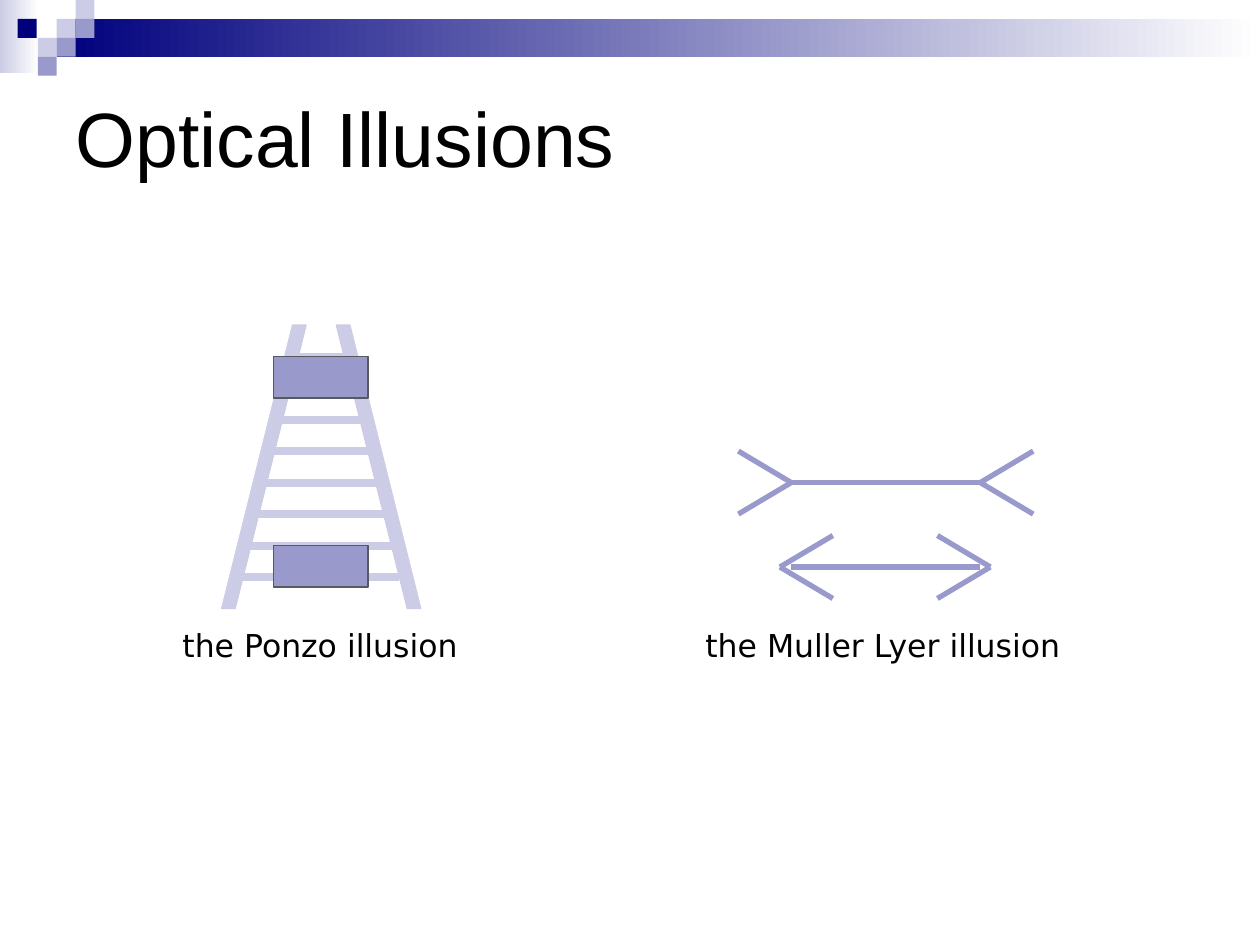
from pptx import Presentation
from pptx.dml.color import RGBColor
from pptx.enum.shapes import MSO_CONNECTOR as Link, MSO_SHAPE as Form
from pptx.enum.text import MSO_ANCHOR as Anchor, PP_ALIGN as Align
from pptx.util import Pt
from lxml.etree import SubElement
from pptx.oxml.ns import qn

PX = 9144  # 100 px to the inch
HUES = {"navy": "00007D", "pale": "CCCCE6", "mid": "9999CC",
        "edge": "555A5E", "white": "FFFFFF", "black": "000000"}

TITLE = "Optical Illusions"
CAPTIONS = [("the Ponzo illusion", 135, 240), ("the Muller Lyer illusion", 550, 305)]
BANDS = [("pale", (0, 0, 31, 58)), ("navy", (45, 15, 955, 30))]
CELL = 15
TILES = [("pale", 45, 15), ("pale", 60, 0), ("mid", 60, 15), ("pale", 30, 30),
         ("navy", 14, 15), ("mid", 45, 30), ("mid", 30, 45)]

LEGS = [(176, False), (267, True)]
# Left and right end of each rung, from the lowest up; None is a gap
RUNGS = [(184, 317), (192, 317), (201, 309), (209, 301),
         (217, 292), (217, 292), None, (234, 276)]
RUNG_LOW, RUNG_STEP = 458, 25
BAR_TOPS = [433, 283]

SHAFT = (628, 778)
FIN = (42, 25)
# Shaft height, fin tips, and the way the left fins point
ARROWS = [(383, (628, 778), -1), (450, (619, 786), 1)]

deck = Presentation()
deck.slide_width, deck.slide_height = 1000 * PX, 750 * PX
slide = deck.slides.add_slide(deck.slide_layouts[5])
shapes = slide.shapes


def hue(name):
    return RGBColor.from_string(HUES[name])


def scale(box):
    return [n * PX for n in box]


def block(box, fill, edge=None, form=Form.RECTANGLE, fade=False):
    shape = shapes.add_shape(form, *scale(box))
    shape.shadow.inherit = False
    if fade:
        shape.fill.gradient()
        shape.fill.gradient_angle = 0
        for stop, name in zip(shape.fill.gradient_stops, (fill, "white")):
            stop.color.rgb = hue(name)
    else:
        shape.fill.solid()
        shape.fill.fore_color.rgb = hue(fill)
    if edge:
        shape.line.color.rgb = hue(edge)
        shape.line.width = Pt(0.75)
    else:
        shape.line.fill.background()
    return shape


def stroke(start, end, name, width):
    line = shapes.add_connector(Link.STRAIGHT, *scale(start + end))
    line.line.color.rgb = hue(name)
    line.line.width = Pt(width)
    SubElement(line._element.spPr, qn("a:effectLst"))


def write(shape, text, font, size, wrap, anchor, align):
    frame = shape.text_frame
    frame.word_wrap, frame.vertical_anchor = wrap, anchor
    para = frame.paragraphs[0]
    para.text, para.alignment = text, align
    for key, value in {"name": font, "size": Pt(size)}.items():
        setattr(para.font, key, value)
    para.font.color.rgb = hue("black")


# Header
for fill, box in BANDS:
    block(box, fill, fade=True)
for fill, x, y in TILES:
    block((x, y, CELL, CELL), fill)

title = shapes.title
for key, value in zip(("left", "top", "width", "height"), scale((50, 50, 900, 117))):
    setattr(title, key, value)
write(title, TITLE, "Arial", 44, True, Anchor.MIDDLE, Align.LEFT)

# Ponzo ladder
for x, flip in LEGS:
    leg = block((x, 258, 67, 225), "pale", "pale", Form.PARALLELOGRAM)
    leg.adjustments[0] = 0.84
    if flip:
        leg._element.spPr.xfrm.set("flipH", "1")
for i, ends in enumerate(RUNGS):
    if ends:
        y = RUNG_LOW - i * RUNG_STEP
        stroke((ends[0], y), (ends[1], y), "pale", 4.5)
for y in BAR_TOPS:
    block((217, y, 75, 33), "mid", "edge")

# Muller Lyer arrows
for y, tips, way in ARROWS:
    stroke((SHAFT[0], y), (SHAFT[1], y), "mid", 3)
    for tip, side in zip(tips, (way, -way)):
        for rise in (-FIN[1], FIN[1]):
            stroke((tip, y), (tip + side * FIN[0], y + rise), "mid", 3)

for text, x, width in CAPTIONS:
    box = shapes.add_textbox(*scale((x, 492, width, 40)))
    write(box, text, "DejaVu Sans", 18, False, Anchor.TOP, Align.LEFT)

deck.save("out.pptx")
